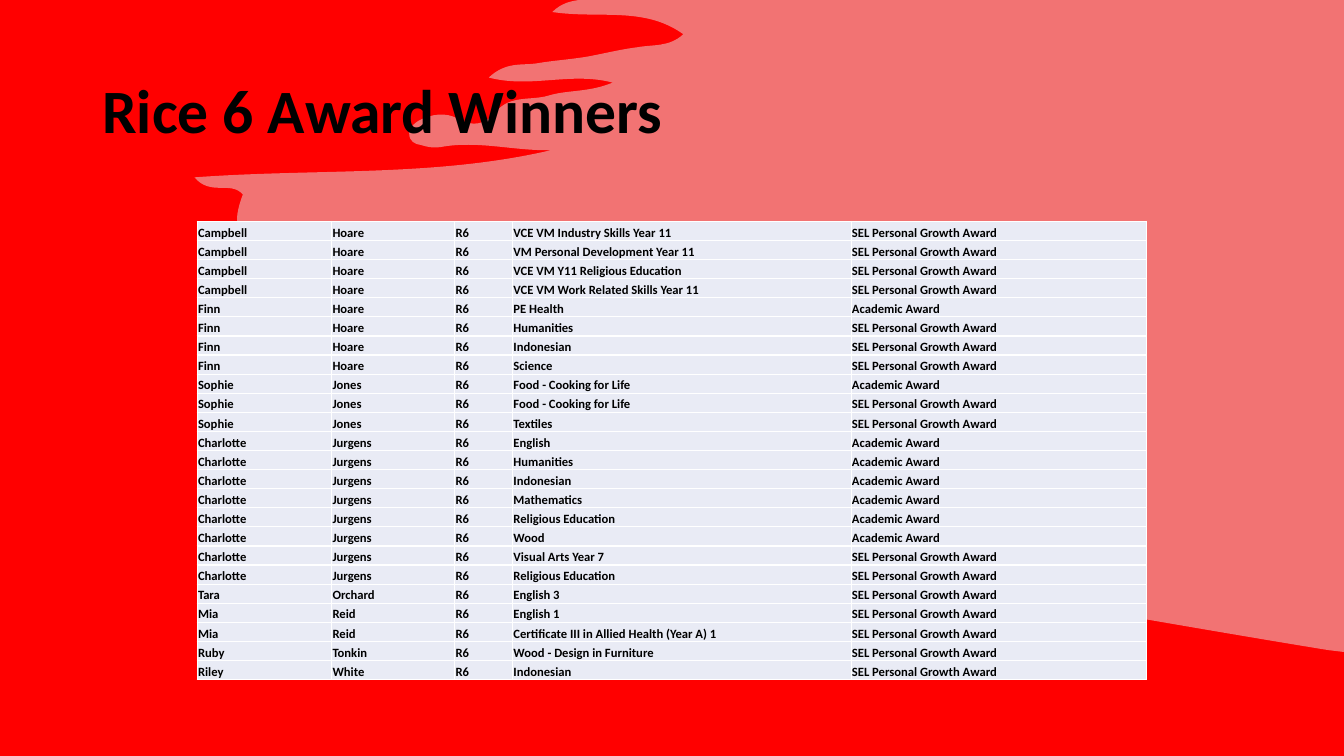
from pptx import Presentation
from pptx.dml.color import RGBColor
from pptx.enum import text as tx
from pptx.oxml import parse_xml
from pptx.oxml.ns import nsdecls, qn
from pptx.util import Cm, Pt
from lxml import etree

RED = RGBColor(0xFF, 0x00, 0x00)
GREY = RGBColor(0xE7, 0xE6, 0xE6)
BLACK = RGBColor(0x00, 0x00, 0x00)
PALE = RGBColor(0xE9, 0xEB, 0xF5)
WHITE = RGBColor(0xFF, 0xFF, 0xFF)
FONT = "Calibri"

ACAD = "Academic Award"
GROW = "SEL Personal Growth Award"

# Winners: first name, surname, then (subject, award) pairs
WINNERS = [
    ("Campbell", "Hoare", [
        ("VCE VM Industry Skills Year 11", GROW),
        ("VM Personal Development Year 11", GROW),
        ("VCE VM Y11 Religious Education", GROW),
        ("VCE VM Work Related Skills Year 11", GROW)]),
    ("Finn", "Hoare", [
        ("PE Health", ACAD), ("Humanities", GROW),
        ("Indonesian", GROW), ("Science", GROW)]),
    ("Sophie", "Jones", [
        ("Food - Cooking for Life", ACAD),
        ("Food - Cooking for Life", GROW), ("Textiles", GROW)]),
    ("Charlotte", "Jurgens", [
        ("English", ACAD), ("Humanities", ACAD), ("Indonesian", ACAD),
        ("Mathematics", ACAD), ("Religious Education", ACAD), ("Wood", ACAD),
        ("Visual Arts Year 7", GROW), ("Religious Education", GROW)]),
    ("Tara", "Orchard", [("English 3", GROW)]),
    ("Mia", "Reid", [
        ("English 1", GROW),
        ("Certificate III in Allied Health (Year A) 1", GROW)]),
    ("Ruby", "Tonkin", [("Wood - Design in Furniture", GROW)]),
    ("Riley", "White", [("Indonesian", GROW)]),
]

# Ragged brush edge in inches: each curve is two controls and an end point
EDGE = [
    (5.67, 0.01, 5.57, 0.03, 5.48, 0.12), (5.95, 0.19, 6.39, 0.06, 6.78, 0.34),
    (6.64, 0.47, 6.48, 0.44, 6.32, 0.47), (6.16, 0.49, 6.00, 0.53, 5.84, 0.56),
    (5.67, 0.59, 5.49, 0.60, 5.32, 0.63), (5.18, 0.65, 5.02, 0.61, 4.85, 0.77),
    (5.27, 0.88, 5.66, 0.71, 6.08, 0.82), (5.84, 0.92, 5.63, 0.89, 5.44, 0.95),
    (5.27, 1.00, 5.06, 0.94, 4.92, 1.11), (4.81, 1.24, 4.69, 1.26, 4.55, 1.18),
    (4.42, 1.11, 4.28, 1.13, 4.15, 1.20), (4.11, 1.23, 4.06, 1.26, 4.06, 1.32),
    (4.06, 1.41, 4.12, 1.43, 4.18, 1.44), (4.24, 1.46, 4.31, 1.47, 4.37, 1.46),
    (4.74, 1.39, 5.10, 1.50, 5.47, 1.49), (4.31, 1.76, 3.14, 1.67, 1.93, 1.76),
    (2.09, 1.95, 2.29, 1.79, 2.41, 1.93), (2.30, 2.22, 2.34, 2.37, 2.58, 2.39),
    (2.80, 2.41, 3.04, 2.31, 3.16, 2.65), (3.20, 2.76, 3.41, 2.73, 3.55, 2.75),
    (3.84, 2.79, 4.14, 2.75, 4.42, 2.88), (4.53, 2.93, 4.60, 2.97, 4.55, 3.11),
    (4.49, 3.25, 4.56, 3.30, 4.66, 3.36), (4.73, 3.40, 4.83, 3.39, 4.89, 3.52),
    (4.28, 3.50, 3.69, 3.40, 3.09, 3.50), (3.75, 3.74, 4.47, 3.73, 5.12, 4.02),
    (5.10, 4.12, 4.95, 4.07, 4.94, 4.22), (5.28, 4.38, 5.69, 4.27, 6.05, 4.50),
    (5.84, 4.61, 5.65, 4.44, 5.45, 4.54), (5.52, 4.69, 8.40, 5.61, 8.92, 5.71),
    (9.78, 5.87, 11.95, 6.25, 13.18, 6.45),
]


def style(para, size):
    for run in para.runs:
        run.font.name = FONT
        run.font.size = Pt(size)
        run.font.bold = True
        run.font.color.rgb = BLACK


# Slide and background
deck = Presentation()
deck.slide_width, deck.slide_height = Cm(33.87), Cm(19.05)
slide = deck.slides.add_slide(deck.slide_layouts[6])
slide.background.fill.solid()
slide.background.fill.fore_color.rgb = RED

# Brush stroke outline
dots = [(5.75, 0)]
for curve in EDGE:
    dots += zip(curve[::2], curve[1::2])
pen = slide.shapes.build_freeform(deck.slide_width, 0)
pen.add_line_segments([(Cm(x * 2.54), Cm(y * 2.54)) for x, y in dots]
                      + [(deck.slide_width, Cm(16.43))])
brush = pen.convert_to_shape()

# Merge each three points after the first line into one cubic curve
lines = list(brush._element.iter(qn("a:lnTo")))
for i in range(1, 1 + 3 * len(EDGE), 3):
    bend = etree.Element(qn("a:cubicBezTo"))
    lines[i].addprevious(bend)
    for line in lines[i:i + 3]:
        bend.append(line[0])
        line.getparent().remove(line)

brush.shadow.inherit = False
brush.line.fill.background()
brush.fill.solid()
brush.fill.fore_color.rgb = GREY
tint = brush._element.spPr.find(qn("a:solidFill"))[0]
etree.SubElement(tint, qn("a:alpha"), val="50000")

# Title
title = slide.shapes.add_textbox(Cm(2.33), Cm(1.01), Cm(29.21), Cm(3.68))
frame = title.text_frame
frame.word_wrap = True
frame.vertical_anchor = tx.MSO_ANCHOR.MIDDLE
frame.text = "Rice 6 Award Winners"
frame.paragraphs[0].line_spacing = 0.9
style(frame.paragraphs[0], 44)

# Award table
rows = [(first, last, "R6", subject, award)
        for first, last, prizes in WINNERS for subject, award in prizes]
widths = [3.39, 3.1, 1.46, 8.53, 7.44]
high = Cm(11.56)
grid = slide.shapes.add_table(len(rows), len(widths), Cm(4.97), Cm(5.58),
                              Cm(sum(widths)), high).table
grid.first_row = grid.horz_banding = False
for col, width in zip(grid.columns, widths):
    col.width = Cm(width)

for row, words in zip(grid.rows, rows):
    row.height = high // len(rows)
    for cell, word in zip(row.cells, words):
        cell.text = word
        style(cell.text_frame.paragraphs[0], 9)
        cell.vertical_anchor = tx.MSO_ANCHOR.BOTTOM
        cell.margin_left = cell.margin_right = cell.margin_top = Cm(0.02)
        cell.margin_bottom = 0
        # Borders go before the fill
        props = cell._tc.get_or_add_tcPr()
        for side in ("lnL", "lnR", "lnT", "lnB"):
            props.append(parse_xml(
                f'<a:{side} {nsdecls("a")} w="{Pt(1)}"><a:solidFill>'
                f'<a:srgbClr val="{WHITE}"/></a:solidFill></a:{side}>'))
        cell.fill.solid()
        cell.fill.fore_color.rgb = PALE

deck.save("out.pptx")
